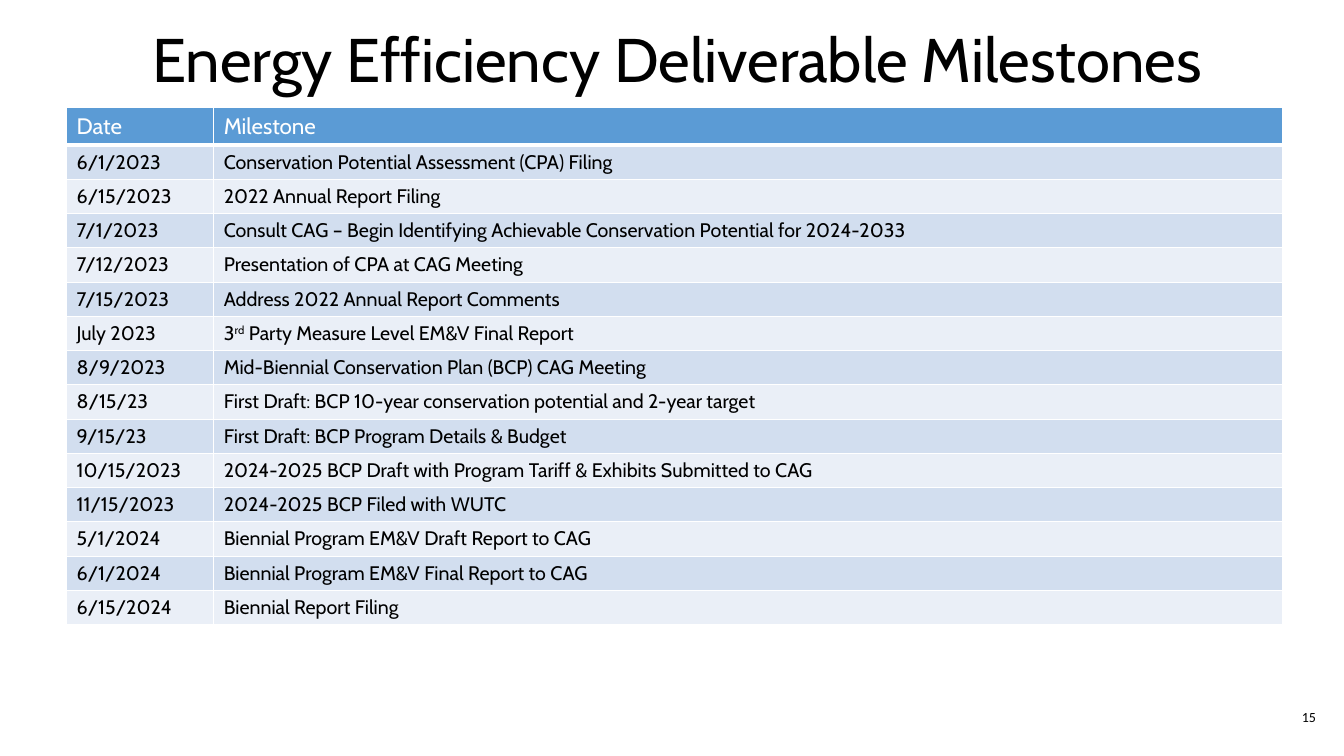
import pptx
import pptx.dml.color
import pptx.enum.text
import pptx.oxml
import pptx.oxml.ns
import pptx.util

Inches, Pt = pptx.util.Inches, pptx.util.Pt
ALIGN = pptx.enum.text.PP_ALIGN
MIDDLE = pptx.enum.text.MSO_ANCHOR.MIDDLE

HEADER = ("Date", "Milestone")
MILESTONES = [
    ("6/1/2023", "Conservation Potential Assessment (CPA) Filing"),
    ("6/15/2023", "2022 Annual Report Filing"),
    ("7/1/2023", "Consult CAG – Begin Identifying Achievable Conservation Potential for 2024-2033"),
    ("7/12/2023", "Presentation of CPA at CAG Meeting"),
    ("7/15/2023", "Address 2022 Annual Report Comments"),
    ("July 2023", ("3", "rd", " Party Measure Level EM&V Final Report")),
    ("8/9/2023", "Mid-Biennial Conservation Plan (BCP) CAG Meeting"),
    ("8/15/23", "First Draft: BCP 10-year conservation potential and 2-year target"),
    ("9/15/23", "First Draft: BCP Program Details & Budget"),
    ("10/15/2023", "2024-2025 BCP Draft with Program Tariff & Exhibits Submitted to CAG"),
    ("11/15/2023", "2024-2025 BCP Filed with WUTC"),
    ("5/1/2024", "Biennial Program EM&V Draft Report to CAG"),
    ("6/1/2024", "Biennial Program EM&V Final Report to CAG"),
    ("6/15/2024", "Biennial Report Filing"),
]
BANDS = ("D2DEEF", "EAEFF7")


def color(hex_text):
    return pptx.dml.color.RGBColor.from_string(hex_text)


def format_runs(p, size, hex_text, font="Cabin"):
    for r in p.runs:
        r.font.size = Pt(size)
        r.font.name = font
        r.font.bold = False
        r.font.color.rgb = color(hex_text)


def add_title(s, box, text):
    sp = s.shapes.title
    sp.left, sp.top, sp.width, sp.height = map(Inches, box)
    tf = sp.text_frame
    tf.text = text
    tf.word_wrap = True
    tf.auto_size = pptx.enum.text.MSO_AUTO_SIZE.NONE
    tf.vertical_anchor = MIDDLE
    p = tf.paragraphs[0]
    p.alignment = ALIGN.LEFT
    p.line_spacing = 0.9
    format_runs(p, 44, "000000")


def add_page_number(s, box, number):
    tf = s.shapes.add_textbox(*map(Inches, box)).text_frame
    tf.text = number
    tf.word_wrap = True
    tf.vertical_anchor = MIDDLE
    tf.paragraphs[0].alignment = ALIGN.RIGHT
    format_runs(tf.paragraphs[0], 10, "000000", "Calibri")


def set_borders(cell, bottom):
    tcPr = cell._tc.get_or_add_tcPr()
    for side, width in (("L", 1), ("R", 1), ("T", 1), ("B", bottom)):
        tcPr.append(pptx.oxml.parse_xml(
            f'<a:ln{side} {pptx.oxml.ns.nsdecls("a")} w="{Pt(width)}">'
            f'<a:solidFill><a:srgbClr val="FFFFFF"/></a:solidFill></a:ln{side}>'))


def fill_cell(cell, content, size, text_hex, fill_hex, bottom=1):
    set_borders(cell, bottom)
    cell.fill.solid()
    cell.fill.fore_color.rgb = color(fill_hex)
    p = cell.text_frame.paragraphs[0]
    if isinstance(content, str):
        p.text = content
    else:
        # Middle part of an ordinal is raised
        for part in content:
            p.add_run().text = part
        p.runs[1]._r.get_or_add_rPr().set("baseline", "30000")
    format_runs(p, size, text_hex)


def add_milestone_table(s, box, header, rows):
    table = s.shapes.add_table(len(rows) + 1, len(header), *map(Inches, box)).table
    date_width, header_height, row_height = 1.46, 0.37, 0.34
    table.columns[0].width = Inches(date_width)
    table.columns[1].width = Inches(box[2] - date_width)
    for i, row in enumerate(table.rows):
        row.height = Inches(row_height if i else header_height)

    # Header row
    for j, text in enumerate(header):
        fill_cell(table.cell(0, j), text, 16, "FFFFFF", "5B9BD5", bottom=3)

    # Banded milestone rows
    for i, row in enumerate(rows):
        for j, content in enumerate(row):
            fill_cell(table.cell(i + 1, j), content, 14, "000000", BANDS[i % 2])


def main():
    prs = pptx.Presentation()
    prs.slide_width, prs.slide_height = Inches(13.33), Inches(7.5)
    s = prs.slides.add_slide(prs.slide_layouts[5])
    add_title(s, (1.41, 0.17, 10.96, 0.91), "Energy Efficiency Deliverable Milestones")
    add_page_number(s, (12.55, 6.91, 0.6, 0.4), "15")
    add_milestone_table(s, (0.66, 1.07, 12.06, 5.13), HEADER, MILESTONES)
    prs.save("out.pptx")


if __name__ == "__main__":
    main()
